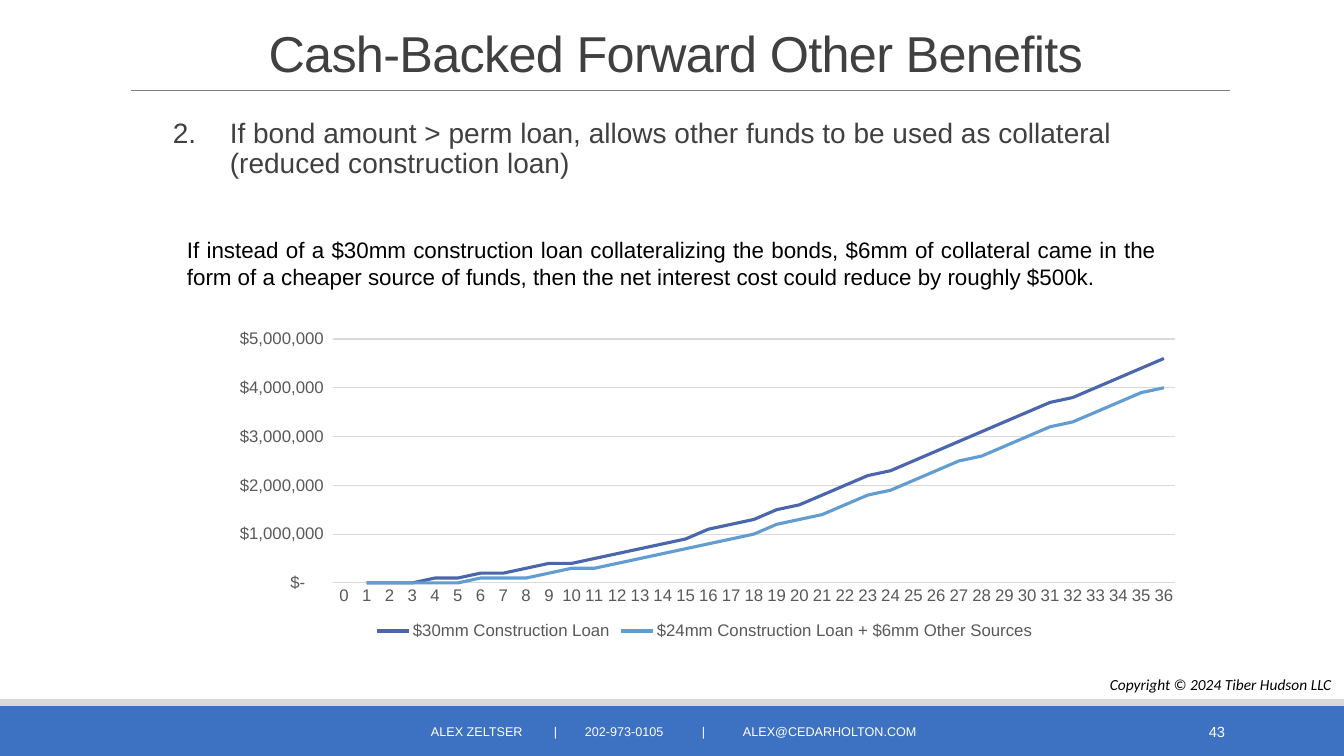
"""Build the slide on other benefits of a cash-backed forward."""
from lxml.etree import SubElement
from pptx import Presentation
from pptx.chart.data import CategoryChartData
from pptx.dml.color import RGBColor
from pptx.enum.chart import XL_CHART_TYPE as ChartType, XL_LEGEND_POSITION as LegendSide
from pptx.enum.chart import XL_TICK_MARK as TickMark
from pptx.enum.shapes import MSO_CONNECTOR as Connector, MSO_SHAPE as Shape
from pptx.enum.text import MSO_ANCHOR as Anchor, PP_ALIGN as Align
from pptx.oxml.ns import qn
from pptx.util import Emu, Pt

WHITE, BLACK = RGBColor(255, 255, 255), RGBColor(0, 0, 0)
CHARCOAL, GRAY = RGBColor(0x40, 0x40, 0x40), RGBColor(0x59, 0x59, 0x59)
RULE, GRID = RGBColor(0x80, 0x80, 0x80), RGBColor(0xD9, 0xD9, 0xD9)
BLUE, SILVER = RGBColor(0x3D, 0x71, 0xC1), RGBColor(0xD8, 0xD8, 0xD8)
NAVY, SKY = RGBColor(0x4A, 0x66, 0xAC), RGBColor(0x62, 0x9D, 0xD1)

BANDS = [((0, 706, 1344, 50), BLUE), ((0, 699, 1344, 7), SILVER)]
TITLE = "Cash-Backed Forward Other Benefits"
BENEFIT = ("If bond amount > perm loan, allows other funds to be used as collateral "
           "(reduced construction loan)")
EXAMPLE = ("If instead of a $30mm construction loan collateralizing the bonds, $6mm of "
           "collateral came in the form of a cheaper source of funds, then the net "
           "interest cost could reduce by roughly $500k.")
COPYRIGHT = "Copyright © 2024 Tiber Hudson LLC"
CONTACT = ["ALEX ZELTSER", "|", "202-973-0105", "|", "ALEX@CEDARHOLTON.COM"]
CONTACT_TABS = [123, 154, 271, 312]
UNIT = 100_000
COSTS = [
    ("$30mm Construction Loan", NAVY,
     [None, 0, 0, 0, 1, 1, 2, 2, 3, 4, 4, 5, 6, 7, 8, 9, 11, 12, 13, 15, 16, 18, 20, 22,
      23, 25, 27, 29, 31, 33, 35, 37, 38, 40, 42, 44, 46]),
    ("$24mm Construction Loan + $6mm Other Sources", SKY,
     [None, 0, 0, 0, 0, 0, 1, 1, 1, 2, 3, 3, 4, 5, 6, 7, 8, 9, 10, 12, 13, 14, 16, 18,
      19, 21, 23, 25, 26, 28, 30, 32, 33, 35, 37, 39, 40]),
]
DOLLARS = '_("$"* #,##0_);_("$"* \\(#,##0\\);_("$"* "-"??_);_(@_)'
PLOT_LAYOUT = {"layoutTarget": "inner", "xMode": "edge", "yMode": "edge",
               "x": 0.12, "y": 0.05, "w": 0.86, "h": 0.76}


def px(length):
    return Emu(round(length * 914400 / 100.8))


def set_all(target, values):
    for name, value in values.items():
        setattr(target, name, value)


def set_font(font, size, color, name="Arial", **extra):
    set_all(font, {"size": Pt(size), "name": name, **extra})
    font.color.rgb = color


def add_text(page, place, text, size, color, align=Align.LEFT, anchor=Anchor.TOP,
             wrap=True, spacing=None, name="Arial", **extra):
    box = page.shapes.add_textbox(*map(px, place))
    set_all(box.text_frame, {"word_wrap": wrap, "vertical_anchor": anchor})
    para = box.text_frame.paragraphs[0]
    set_all(para, {"alignment": align, "line_spacing": spacing})
    span = para.add_run()
    span.text = text
    set_font(span.font, size, color, name, **extra)
    return box, para, span


def add_frame(page):
    for place, color in BANDS:
        band = page.shapes.add_shape(Shape.RECTANGLE, *map(px, place))
        band.shadow.inherit = False
        band.fill.solid()
        band.fill.fore_color.rgb = color
        band.line.fill.background()
    rule = page.shapes.add_connector(Connector.STRAIGHT, *map(px, (131, 90, 1230, 90)))
    rule.line.color.rgb = RULE
    rule.line.width = Pt(0.5)
    SubElement(rule.element.spPr, qn("a:effectLst"))


def add_words(page):
    span = add_text(page, (121, 31, 1109, 52), TITLE, 36, CHARCOAL,
                    Align.CENTER, Anchor.MIDDLE, spacing=0.85)[2]
    span.font.element.set("spc", "-50") if hasattr(span.font, "element") else \
        span._r.get_or_add_rPr().set("spc", "-50")

    para = add_text(page, (163, 114, 1031, 435), BENEFIT, 20, CHARCOAL, spacing=0.9)[1]
    para.space_after = Pt(2)
    properties = para._p.get_or_add_pPr()
    properties.set("marL", str(px(57)))
    properties.set("indent", str(-px(57)))
    SubElement(properties, qn("a:buFont"), typeface="+mj-lt")
    SubElement(properties, qn("a:buAutoNum"), type="arabicPeriod", startAt="2")

    add_text(page, (177, 231, 989, 65), EXAMPLE, 16, BLACK, Align.JUSTIFY)
    add_text(page, (1100, 670, 244, 29), COPYRIGHT, 11, BLACK, wrap=False,
             name="Calibri", italic=True)
    add_text(page, (1091, 712, 144, 40), "43", 10.5, WHITE, Align.RIGHT, Anchor.MIDDLE)

    box, para, _ = add_text(page, (406, 712, 531, 40), "\t".join(CONTACT), 9, WHITE,
                            anchor=Anchor.MIDDLE)
    box.text_frame.margin_left = px(25)
    tabs = SubElement(para._p.get_or_add_pPr(), qn("a:tabLst"))
    for stop in CONTACT_TABS:
        SubElement(tabs, qn("a:tab"), pos=str(px(stop)), algn="l")


def add_cost_chart(page):
    data = CategoryChartData()
    data.categories = [str(month) for month in range(37)]
    for name, _, values in COSTS:
        data.add_series(name, [None if value is None else value * UNIT for value in values])
    chart = page.shapes.add_chart(ChartType.LINE, *map(px, (215, 323, 980, 321)), data).chart
    set_all(chart, {"has_title": False, "has_legend": True})
    set_font(chart.font, 10, BLACK)
    set_all(chart.legend, {"position": LegendSide.BOTTOM, "include_in_layout": False})
    set_font(chart.legend.font, 12, GRAY)

    plot = chart.plots[0]
    plot.vary_by_categories = False
    for series, (_, color, _) in zip(plot.series, COSTS):
        series.smooth = False
        series.format.line.color.rgb = color
        series.format.line.width = Pt(2.25)

    months, dollars = chart.category_axis, chart.value_axis
    for axis in (months, dollars):
        set_all(axis, {"major_tick_mark": TickMark.NONE, "minor_tick_mark": TickMark.NONE})
        set_font(axis.tick_labels.font, 12, GRAY)
    set_all(dollars, {"minimum_scale": 0, "maximum_scale": 5_000_000,
                      "major_unit": 1_000_000, "has_major_gridlines": True})
    set_all(dollars.tick_labels, {"number_format": DOLLARS, "number_format_is_linked": False})
    dollars.format.line.fill.background()
    for line in (months.format.line, dollars.major_gridlines.format.line):
        line.color.rgb = GRID
        line.width = Pt(0.75)

    area = chart.element.find(".//" + qn("c:plotArea"))
    layout = area.find(qn("c:layout"))
    if layout is None:
        layout = SubElement(area, qn("c:layout"))
        area.insert(0, layout)
    manual = SubElement(layout, qn("c:manualLayout"))
    for name, value in PLOT_LAYOUT.items():
        SubElement(manual, qn("c:" + name), val=str(value))


def main():
    deck = Presentation()
    set_all(deck, {"slide_width": px(1344), "slide_height": px(756)})
    page = deck.slides.add_slide(deck.slide_layouts[6])
    add_frame(page)
    add_words(page)
    add_cost_chart(page)
    deck.save("out.pptx")


if __name__ == "__main__":
    main()
